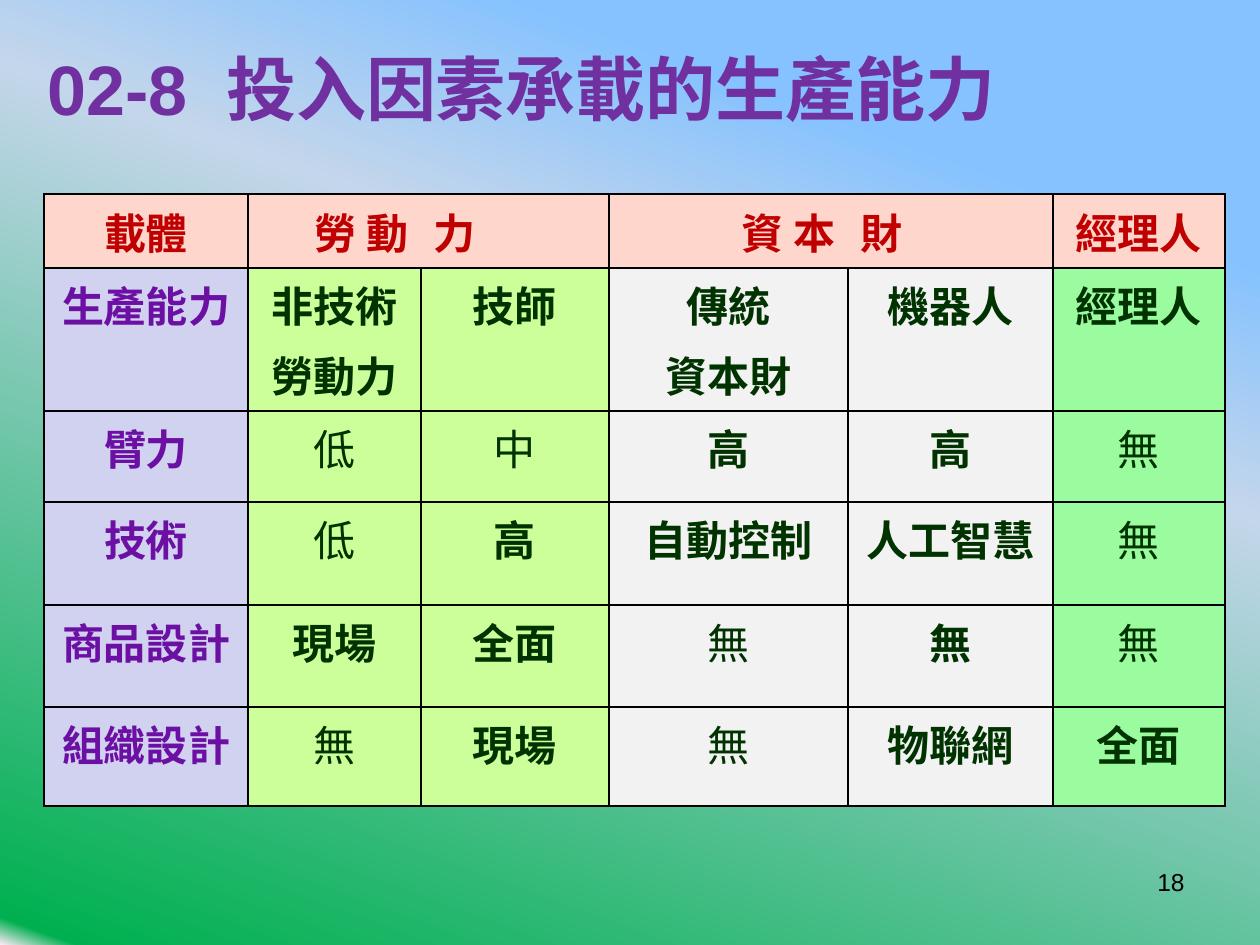
from dataclasses import dataclass

from lxml.etree import SubElement
from pptx import Presentation
from pptx.dml.color import RGBColor as RGB
from pptx.enum.text import MSO_ANCHOR as Anchor, PP_ALIGN as Align
from pptx.oxml.ns import qn
from pptx.util import Emu, Pt

EMU_PER_PX = 914400 / 126


@dataclass(frozen=True)
class Theme:
    latin: str = "Arial"
    cjk: str = "Noto Sans CJK SC"
    title: str = "7030A0"
    header: str = "C00000"
    ability: str = "6C10A4"
    body: str = "003300"
    black: str = "000000"
    header_fill: str = "FFD6CC"
    ability_fill: str = "D1D1F0"
    labour_fill: str = "CCFF99"
    capital_fill: str = "F2F2F2"
    manager_fill: str = "9AFC9F"
    title_size: int = 40
    table_size: int = 24
    number_size: int = 14
    paragraph_gap: float = 4.8
    border_width: int = 1
    backdrop: tuple = ((19, "85C2FF"), (37, "C4D6EB"), (98, "00B050"), (100, "FFEBFA"))
    backdrop_angle: int = 110


THEME = Theme()

COLUMN_WIDTHS = (204, 173, 188, 239, 205, 172)
ROW_HEIGHTS = (74, 143, 91, 103, 102, 99)
ABILITIES = (
    ("載體", "勞 動", "力", "資 本", "財", "經理人"),
    ("生產能力", "非技術\n勞動力", "技師", "傳統\n資本財", "機器人", "經理人"),
    ("臂力", "低", "中", "高", "高", "無"),
    ("技術", "低", "高", "自動控制", "人工智慧", "無"),
    ("商品設計", "現場", "全面", "無", "無", "無"),
    ("組織設計", "無", "現場", "無", "物聯網", "全面"),
)
LOW_RATINGS = {"低", "中", "無"}
EMPHASISED = {(4, 4)}  # the robot's "無" under product design is bold
SPLIT_HEADINGS = {1: 2, 3: 4}  # left and right halves of the wide headings


def px(length):
    return Emu(round(length * EMU_PER_PX))


def write(frame, text, *, size, color, font=THEME.latin, bold=False, align=Align.LEFT, gap=0):
    """Fill a text frame, one paragraph for each line."""
    frame.word_wrap = True
    for index, line in enumerate(text.split("\n")):
        paragraph = frame.add_paragraph() if index else frame.paragraphs[0]
        paragraph.alignment = align
        paragraph.space_before = Pt(gap)
        run = paragraph.add_run()
        run.text = line
        run.font.name = font
        run.font.size = Pt(size)
        run.font.bold = bold
        run.font.color.rgb = RGB.from_string(color)
        SubElement(run.font._element, qn("a:ea"), typeface=THEME.cjk)


def add_label(slide, text, left, top, width, height, anchor=Anchor.TOP, **text_format):
    label = slide.shapes.add_textbox(px(left), px(top), px(width), px(height))
    label.text_frame.vertical_anchor = anchor
    write(label.text_frame, text, **text_format)


def paint_backdrop(slide):
    fill = slide.background.fill
    fill.gradient()
    fill.gradient_angle = 360 - THEME.backdrop_angle
    stops = next(slide.element.iter(qn("a:gsLst")))
    for default_stop in list(stops):
        stops.remove(default_stop)
    for percent, color in THEME.backdrop:
        stop = SubElement(stops, qn("a:gs"), pos=str(percent * 1000))
        SubElement(stop, qn("a:srgbClr"), val=color)


def draw_borders(cell, open_sides):
    properties = cell._tc.get_or_add_tcPr()
    for side in "LRTB":
        line = SubElement(properties, qn(f"a:ln{side}"), w=str(Pt(THEME.border_width)))
        if side in open_sides:
            SubElement(line, qn("a:noFill"))
        else:
            color = SubElement(line, qn("a:solidFill"))
            SubElement(color, qn("a:srgbClr"), val=THEME.black)


def cell_look(row, column, text):
    """Fill, open sides and text format that follow from a cell's place."""
    column_fills = (THEME.ability_fill, THEME.labour_fill, THEME.labour_fill,
                    THEME.capital_fill, THEME.capital_fill, THEME.manager_fill)
    fill, open_sides, align = column_fills[column], "", Align.CENTER
    color = THEME.body if column else THEME.ability
    if row == 0:
        fill, color = THEME.header_fill, THEME.header
        if column in SPLIT_HEADINGS:
            open_sides, align = "R", Align.RIGHT
        elif column in SPLIT_HEADINGS.values():
            open_sides, align = "L", Align.LEFT
    font = THEME.cjk if row < 2 or column == 0 else THEME.latin
    bold = text not in LOW_RATINGS or (row, column) in EMPHASISED
    return fill, open_sides, dict(color=color, align=align, font=font, bold=bold)


def add_ability_table(slide, left, top):
    frame = slide.shapes.add_table(
        len(ROW_HEIGHTS), len(COLUMN_WIDTHS), px(left), px(top),
        px(sum(COLUMN_WIDTHS)), px(sum(ROW_HEIGHTS)))
    table = frame.table
    table.first_row = table.horz_banding = False
    for column, width in zip(table.columns, COLUMN_WIDTHS):
        column.width = px(width)
    for row, height in zip(table.rows, ROW_HEIGHTS):
        row.height = px(height)

    for r, texts in enumerate(ABILITIES):
        for c, text in enumerate(texts):
            cell = table.cell(r, c)
            fill, open_sides, text_format = cell_look(r, c, text)
            draw_borders(cell, open_sides)
            cell.fill.solid()
            cell.fill.fore_color.rgb = RGB.from_string(fill)
            write(cell.text_frame, text, size=THEME.table_size,
                  gap=THEME.paragraph_gap, **text_format)


def main():
    deck = Presentation()
    deck.slide_width, deck.slide_height = px(1260), px(945)
    slide = deck.slides.add_slide(deck.slide_layouts[6])
    paint_backdrop(slide)

    # Title
    add_label(slide, "02-8  投入因素承載的生產能力", 35, 0, 1162, 175, Anchor.MIDDLE,
              size=THEME.title_size, color=THEME.title, bold=True)

    # Abilities carried by each input factor
    add_ability_table(slide, 44, 194)

    # Slide number
    add_label(slide, "18", 903, 861, 294, 66,
              size=THEME.number_size, color=THEME.black, align=Align.RIGHT)

    deck.save("out.pptx")


if __name__ == "__main__":
    main()
